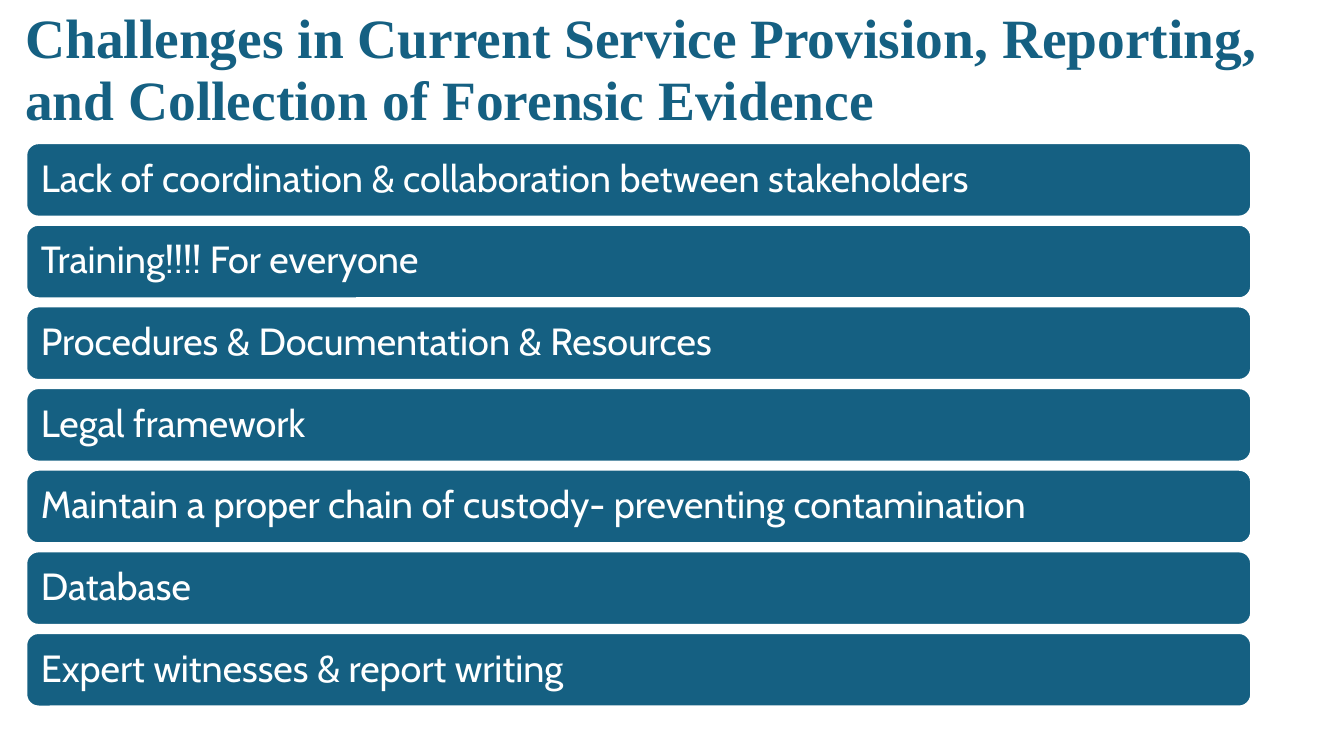
import pptx
import pptx.dml.color
import pptx.enum.shapes
import pptx.enum.text
import pptx.util
from pptx.util import Inches

TEAL = "156082"
WHITE = "FFFFFF"
TITLE = ("Challenges in Current Service Provision, Reporting, "
         "and Collection of Forensic Evidence")
CHALLENGES = [
    "Lack of coordination & collaboration between stakeholders",
    "Training!!!! For everyone",
    "Procedures & Documentation & Resources",
    "Legal framework",
    "Maintain a proper chain of custody- preventing contamination",
    "Database",
    "Expert witnesses & report writing",
]
FIRST_BAR_TOP = 1.42
BAR_PITCH = 0.81


def color(hex_value):
    return pptx.dml.color.RGBColor.from_string(hex_value)


def write_text(shape, text, font_name, size, hex_value, bold, spacing):
    """Fill a shape with one left-aligned paragraph."""
    text_frame = shape.text_frame
    text_frame.text = text
    text_frame.word_wrap = True
    paragraph = text_frame.paragraphs[0]
    paragraph.alignment = pptx.enum.text.PP_ALIGN.LEFT
    paragraph.line_spacing = spacing
    font = paragraph.runs[0].font
    font.name = font_name
    font.size = pptx.util.Pt(size)
    font.bold = bold
    font.color.rgb = color(hex_value)


def format_title(title):
    title.left, title.top = Inches(0.15), Inches(0.08)
    title.width, title.height = Inches(12.81), Inches(1.77)
    write_text(title, TITLE, "Times New Roman", 39.6, TEAL, True, 0.94)
    text_frame = title.text_frame
    text_frame.auto_size = pptx.enum.text.MSO_AUTO_SIZE.NONE
    text_frame.vertical_anchor = pptx.enum.text.MSO_ANCHOR.TOP
    text_frame.margin_top = 0


def add_bar(slide, top, text):
    bar = slide.shapes.add_shape(
        pptx.enum.shapes.MSO_SHAPE.ROUNDED_RECTANGLE,
        Inches(0.26), Inches(top), Inches(12.15), Inches(0.73))
    bar.shadow.inherit = False
    bar.fill.solid()
    bar.fill.fore_color.rgb = color(TEAL)
    bar.line.color.rgb = color(WHITE)
    bar.line.width = pptx.util.Pt(1.5)
    write_text(bar, text, "Cabin", 27, WHITE, False, 0.9)
    text_frame = bar.text_frame
    text_frame.vertical_anchor = pptx.enum.text.MSO_ANCHOR.MIDDLE
    # The rounded corners already inset the text by a few hundredths
    text_frame.margin_left = text_frame.margin_right = Inches(0.11)


def main():
    presentation = pptx.Presentation()
    presentation.slide_width = Inches(13.33)
    presentation.slide_height = Inches(7.5)
    slide = presentation.slides.add_slide(presentation.slide_layouts[5])

    # Title
    format_title(slide.shapes.title)

    # One bar per challenge
    for index, challenge in enumerate(CHALLENGES):
        add_bar(slide, FIRST_BAR_TOP + index * BAR_PITCH, challenge)

    presentation.save("out.pptx")


if __name__ == "__main__":
    main()
